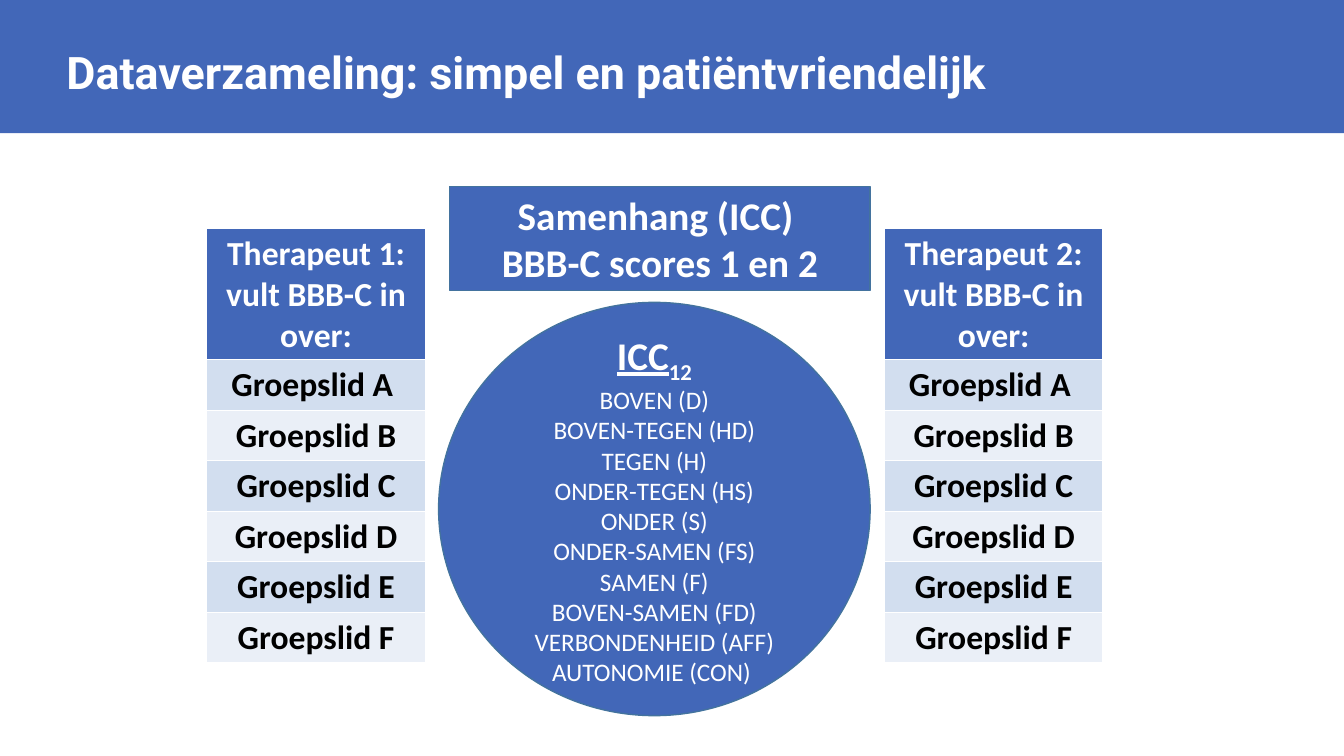
from pptx import Presentation
from pptx.dml.color import RGBColor
from pptx.enum.shapes import MSO_SHAPE
from pptx.enum.text import MSO_ANCHOR, PP_ALIGN
from pptx.util import Inches, Pt

COLORS = {
    "blue": "4267B8", "edge": "43739E", "white": "FFFFFF",
    "black": "000000", "dark": "D2DEEF", "light": "EAEFF7",
}


def write(frame, lines, size=24, bold=True, color="white", font="Calibri",
          align=PP_ALIGN.CENTER, more=False):
    """Fill a text frame, one paragraph a line; more appends to its text."""
    frame.word_wrap = True
    for i, line in enumerate(lines):
        par = frame.add_paragraph() if more or i else frame.paragraphs[0]
        par.alignment = align
        run = par.add_run()
        run.text = line
        run.font.size = Pt(size)
        run.font.bold = bold
        run.font.name = font
        run.font.color.rgb = RGBColor.from_string(COLORS[color])


def block(kind, left, top, width, height, edge=None):
    """Add a blue shape, with an edge if a colour is named."""
    shape = slide.shapes.add_shape(
        kind, Inches(left), Inches(top), Inches(width), Inches(height))
    shape.shadow.inherit = False
    shape.fill.solid()
    shape.fill.fore_color.rgb = RGBColor.from_string(COLORS["blue"])
    if edge:
        shape.line.color.rgb = RGBColor.from_string(COLORS[edge])
        shape.line.width = Pt(1)
    else:
        shape.line.fill.background()
    shape.text_frame.vertical_anchor = MSO_ANCHOR.MIDDLE
    return shape


deck = Presentation()
deck.slide_width = Inches(13.33)
deck.slide_height = Inches(7.5)
slide = deck.slides.add_slide(deck.slide_layouts[6])

# Title bar
block(MSO_SHAPE.RECTANGLE, 0, 0, 13.33, 1.32)
title = slide.shapes.add_textbox(
    Inches(0.56), Inches(0.26), Inches(12.42), Inches(0.8)).text_frame
title.vertical_anchor = MSO_ANCHOR.MIDDLE
write(title, ["Dataverzameling: simpel en patiëntvriendelijk"],
      size=32, font="Roboto", align=PP_ALIGN.LEFT)
title.paragraphs[0].line_spacing = 1.2

# One table per therapist
members = ["A ", "B", "C", "D", "E", "F"]
for number, left in ((1, 2.05), (2, 8.77)):
    table = slide.shapes.add_table(
        len(members) + 1, 1, Inches(left), Inches(2.27),
        Inches(2.17), Inches(4.3)).table
    for i, row in enumerate(table.rows):
        row.height = Inches(0.5 if i else 1.3)
        cell = row.cells[0]
        if i == 0:
            fill = "blue"
            write(cell.text_frame,
                  [f"Therapeut {number}:", "vult BBB-C in over:"])
        else:
            fill = "dark" if i % 2 else "light"
            write(cell.text_frame, [f"Groepslid {members[i - 1]}"],
                  color="black")
        cell.fill.solid()
        cell.fill.fore_color.rgb = RGBColor.from_string(COLORS[fill])

# Circle with the scales
scales = [
    "BOVEN (D)", "BOVEN-TEGEN (HD)", "TEGEN (H)", "ONDER-TEGEN (HS)",
    "ONDER (S)", "ONDER-SAMEN (FS)", "SAMEN (F)", "BOVEN-SAMEN (FD)",
    "VERBONDENHEID (AFF)", "AUTONOMIE (CON) ",
]
circle = block(MSO_SHAPE.OVAL, 4.35, 3, 4.28, 4.1, edge="edge").text_frame
write(circle, ["ICC"], size=28)
head = circle.paragraphs[0]
head.runs[0].font.underline = True
sub = head.add_run()
sub.text = "12"
sub.font.size = Pt(28)
sub.font.bold = True
sub.font.name = "Calibri"
sub.font.color.rgb = RGBColor.from_string(COLORS["white"])
sub.font._element.set("baseline", "-25000")
write(circle, scales, size=18, bold=False, more=True)

# Heading above the circle
label = block(MSO_SHAPE.RECTANGLE, 4.46, 1.85, 4.17, 1.03, edge="edge")
write(label.text_frame, ["Samenhang (ICC) ", "BBB-C scores 1 en 2"], size=28)

deck.save("out.pptx")
